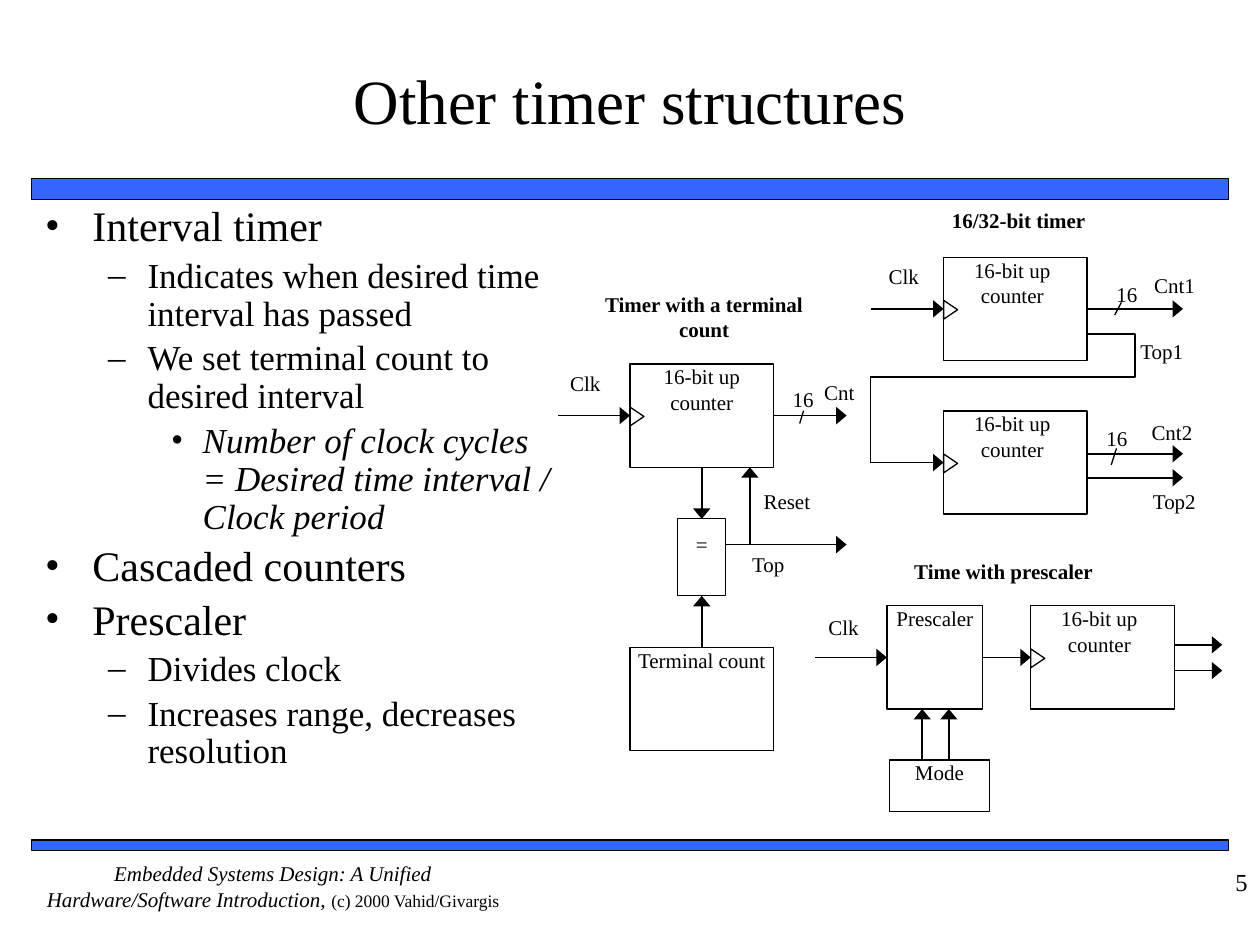
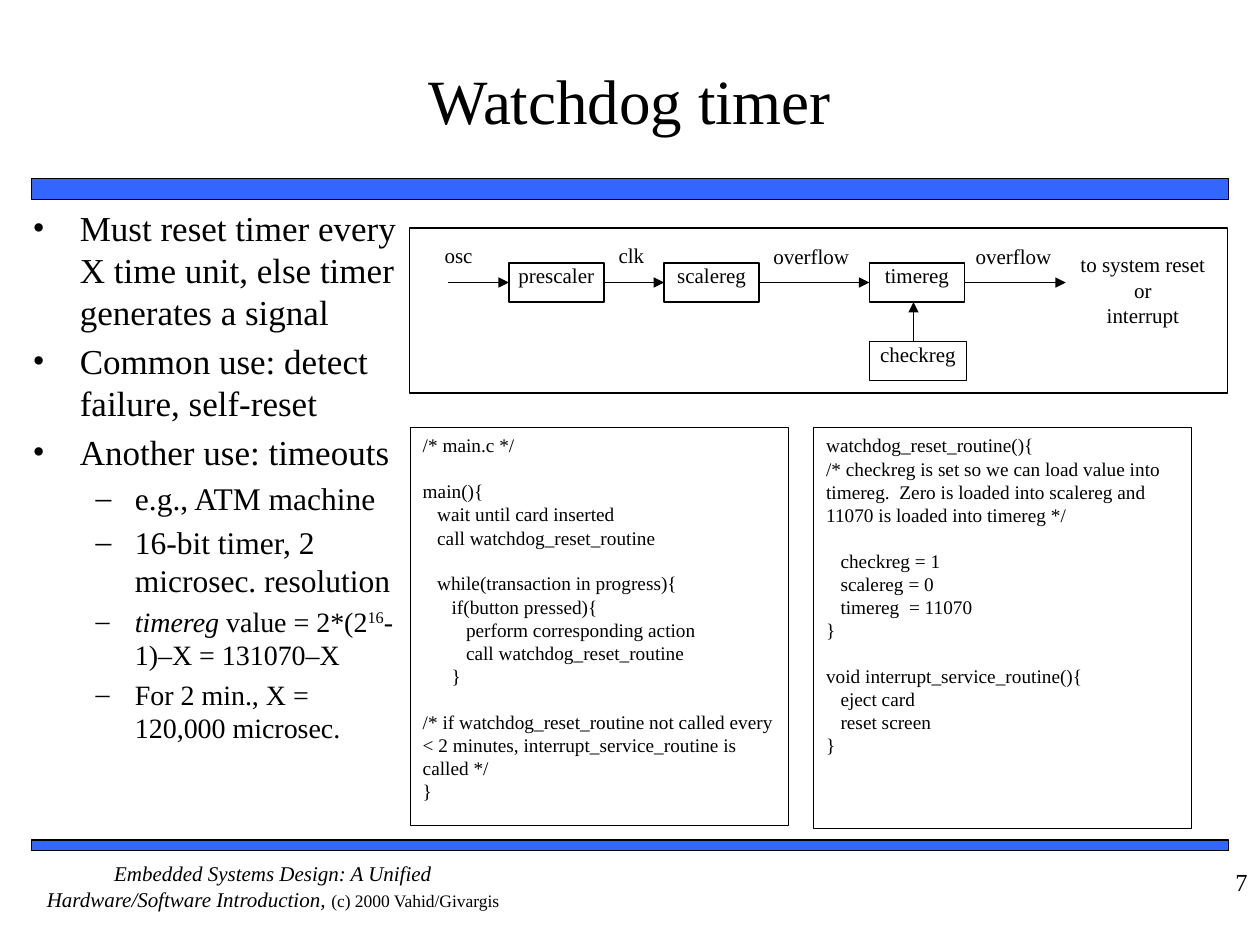
"""Build two slides on timer structures and the watchdog timer."""
from pptx import Presentation
from pptx.dml.color import RGBColor
from pptx.enum.shapes import MSO_CONNECTOR, MSO_SHAPE
from pptx.enum.text import MSO_ANCHOR, PP_ALIGN
from pptx.oxml.ns import qn
from pptx.util import Pt
from lxml.etree import SubElement

BLACK = RGBColor(0x00, 0x00, 0x00)
BAND_BLUE = RGBColor(0x33, 0x66, 0xFF)
FONT = "Times New Roman"
TOP, LEFT, BOTTOM, RIGHT = 0, 1, 2, 3
BULLETS = [("•", 27, -27), ("–", 58.5, -22.5), ("•", 90, -18)]
CODE_INDENT = 8.25
CODE_LINE = 13


def add_box(slide, text, left, top, width, height, outline=0, fill=None, size=12,
            bold=False, align=PP_ALIGN.CENTER, insets=(0, 0, 0, 0)):
    """Add a rectangle when an outline width is given, otherwise a text box."""
    place = Pt(left), Pt(top), Pt(width), Pt(height)
    if outline:
        shape = slide.shapes.add_shape(MSO_SHAPE.RECTANGLE, *place)
        shape.shadow.inherit = False
        shape.line.color.rgb = BLACK
        shape.line.width = Pt(outline)
        if fill is None:
            shape.fill.background()
        else:
            shape.fill.solid()
            shape.fill.fore_color.rgb = fill
    else:
        shape = slide.shapes.add_textbox(*place)
    frame = shape.text_frame
    frame.word_wrap = True
    frame.vertical_anchor = MSO_ANCHOR.TOP
    frame.margin_left, frame.margin_top, frame.margin_right, frame.margin_bottom = map(Pt, insets)
    frame.text = text
    for paragraph in frame.paragraphs:
        paragraph.alignment = align
        for run in paragraph.runs:
            run.font.name = FONT
            run.font.size = Pt(size)
            run.font.bold = bold
            run.font.color.rgb = BLACK
    return shape


def add_line(slide, points, width=1, head="lg", begin=None, end=None):
    """Draw a connector through two points, or an open outline through more."""
    points = [(Pt(x), Pt(y)) for x, y in points]
    if len(points) == 2:
        line = slide.shapes.add_connector(MSO_CONNECTOR.STRAIGHT, *points[0], *points[1])
        if begin:
            line.begin_connect(*begin)
        if end:
            line.end_connect(*end)
    else:
        builder = slide.shapes.build_freeform(*points[0])
        builder.add_line_segments(points[1:], close=False)
        line = builder.convert_to_shape()
        line.fill.background()
    line.line.color.rgb = BLACK
    line.line.width = Pt(width)
    if head:
        SubElement(line.line._get_or_add_ln(), qn("a:tailEnd"), type="triangle", w=head, len="med")
    SubElement(line._element.spPr, qn("a:effectLst"))


presentation = Presentation()
presentation.slide_width = Pt(720)
presentation.slide_height = Pt(540)

timer_points = [
    (0, 24, [("Interval timer", "")]),
    (1, 20, [("Indicates when desired time interval has passed", "")]),
    (1, 20, [("We set terminal count to desired interval", "")]),
    (2, 20, [("Number of clock cycles = Desired time interval / Clock period", "italic")]),
    (0, 24, [("Cascaded counters", "")]),
    (0, 24, [("Prescaler", "")]),
    (1, 20, [("Divides clock", "")]),
    (1, 20, [("Increases range, decreases resolution", "")]),
]
watchdog_points = [
    (0, 20, [("Must reset timer every X time unit, else timer generates a signal", "")]),
    (0, 20, [("Common use: detect failure, self-reset", "")]),
    (0, 20, [("Another use: timeouts", "")]),
    (1, 18, [("e.g., ATM machine", "")]),
    (1, 18, [("16-bit timer, 2 microsec. resolution", "")]),
    (1, 16, [("timereg", "italic"), (" value = 2*(2", ""), ("16", "superscript"),
             ("-1)–X = 131070–X", "")]),
    (1, 16, [("For 2 min., X = 120,000 microsec.", "")]),
]
pages = [
    ("Other timer structures", "5", (18.7, 114, 309, 343.5), 0.9, timer_points),
    ("Watchdog timer", "7", (11.5, 114.5, 226.8, 358.5), 1.0, watchdog_points),
]
slides = []
for title, number, body_place, line_spacing, points in pages:
    slide = presentation.slides.add_slide(presentation.slide_layouts[6])
    slides.append(slide)
    for band_top, band_height in [(102, 12), (480, 6)]:
        add_box(slide, "", 18, band_top, 684, band_height, outline=1, fill=BAND_BLUE)
    footer = add_box(slide, "Embedded Systems Design: A Unified Hardware/Software Introduction, ",
                     18, 492, 276, 36)
    paragraph = footer.text_frame.paragraphs[0]
    paragraph.runs[0].font.italic = True
    credit = paragraph.add_run()
    credit.text = "(c) 2000 Vahid/Givargis"
    credit.font.name = FONT
    credit.font.size = Pt(10)
    credit.font.color.rgb = BLACK
    heading = add_box(slide, title, 30, 12, 660, 90, size=36, insets=(0, 3.6, 0, 3.6))
    heading.text_frame.vertical_anchor = MSO_ANCHOR.MIDDLE
    add_box(slide, number, 648, 492, 72, 36, size=14, align=PP_ALIGN.RIGHT,
            insets=(7.2, 3.6, 7.2, 3.6))

    body = add_box(slide, "", *body_place, insets=(7.2, 3.6, 7.2, 3.6)).text_frame
    for index, (level, size, pieces) in enumerate(points):
        paragraph = body.add_paragraph() if index else body.paragraphs[0]
        paragraph.alignment = PP_ALIGN.LEFT
        paragraph.level = level
        paragraph.line_spacing = line_spacing
        paragraph.space_before = Pt(size * 0.2)
        bullet, margin, indent = BULLETS[level]
        properties = paragraph._p.get_or_add_pPr()
        properties.set("marL", str(Pt(margin)))
        properties.set("indent", str(Pt(indent)))
        SubElement(properties, qn("a:buFont"), typeface=FONT)
        SubElement(properties, qn("a:buChar"), char=bullet)
        for text, style in pieces:
            run = paragraph.add_run()
            run.text = text
            run.font.name = FONT
            run.font.size = Pt(size)
            run.font.color.rgb = BLACK
            run.font.italic = style == "italic"
            if style == "superscript":
                run._r.get_or_add_rPr().set("baseline", "30000")

timers, watchdog = slides

boxes = {}
for name, text, left, top, width, height, insets in [
    ("terminal counter", "16-bit up counter", 360, 208, 82, 59, (0, 0, 0, 0)),
    ("comparator", "=", 387.3, 296.5, 27.4, 44, (0, 7.2, 0, 0)),
    ("terminal count", "Terminal count", 360, 370, 82, 59, (0, 0, 0, 0)),
    ("upper counter", "16-bit up counter", 539.2, 147, 82, 59, (0, 0, 3.6, 0)),
    ("lower counter", "16-bit up counter", 539.2, 234.8, 82, 59, (0, 0, 3.6, 0)),
    ("prescaler", "Prescaler", 506.8, 346.2, 54.8, 59, (0, 0, 0, 0)),
    ("prescaled counter", "16-bit up counter", 589, 346.2, 82, 59, (0, 0, 3.6, 0)),
    ("mode", "Mode", 508.3, 434.2, 57, 29.5, (0, 0, 0, 0)),
]:
    boxes[name] = add_box(timers, text, left, top, width, height, outline=0.75, insets=insets)

for text, left, top, width, height in [
    ("Timer with a terminal count", 339, 166.3, 126.7, 29.5),
    ("16/32-bit timer", 527, 118.8, 110.2, 22.3),
    ("Time with prescaler", 499.7, 319, 147.6, 24.5),
]:
    add_box(timers, text, left, top, width, height, bold=True)

for left, top, width in [(315.4, 211.7, 38.2), (496, 150.5, 41), (460, 351.4, 44)]:
    add_box(timers, "Clk", left, top, width, 20)

for text, left, top in [
    ("16", 452.9, 221), ("Cnt", 470.9, 216.7), ("Reset", 436.3, 279.4), ("Top", 429.8, 315.4),
    ("16", 638, 160.6), ("Cnt1", 659.5, 155.5), ("Top1", 651.6, 193.7),
    ("16", 632.2, 243.4), ("Cnt2", 658, 239.8), ("Top2", 658.8, 279.4),
]:
    add_box(timers, text, left, top, 40, 20, align=PP_ALIGN.LEFT)

for points, begin, end in [
    ([(319, 237.5), (360, 237.5)], None, ("terminal counter", LEFT)),
    ([(442, 237.5), (483.8, 237.5)], ("terminal counter", RIGHT), None),
    ([(401, 267), (401, 296.5)], ("terminal counter", BOTTOM), ("comparator", TOP)),
    ([(401, 370), (401, 340.5)], ("terminal count", TOP), ("comparator", BOTTOM)),
    ([(414.7, 311.2), (483.8, 311.2)], None, None),
    ([(428.5, 311.2), (428.5, 267)], None, None),
    ([(497.5, 176.5), (539.2, 176.5)], None, ("upper counter", LEFT)),
    ([(621.2, 176.5), (676, 176.5)], ("upper counter", RIGHT), None),
    ([(621.2, 190.8), (648.7, 190.8), (648.7, 215.3), (497.5, 215.3), (497.5, 264.3),
      (539.2, 264.3)], None, None),
    ([(621.2, 259.3), (676, 259.3)], None, None),
    ([(621.2, 273), (676, 273)], None, None),
    ([(465.8, 375.7), (506.8, 375.7)], None, ("prescaler", LEFT)),
    ([(561.6, 375.7), (589, 375.7)], ("prescaler", RIGHT), ("prescaled counter", LEFT)),
    ([(671, 368.5), (698.4, 368.5)], None, None),
    ([(671, 383.2), (698.4, 383.2)], None, None),
    ([(527, 434.2), (527, 405.2)], None, None),
    ([(542.2, 434.8), (542.2, 405.2)], None, None),
]:
    add_line(timers, points, begin=begin and (boxes[begin[0]], begin[1]),
             end=end and (boxes[end[0]], end[1]))

for start, finish in [((459.2, 234.7), (457, 242)), ((640.8, 172.8), (637, 180)),
                      ((638, 256.2), (635, 265.7))]:
    add_line(timers, [start, finish], width=0.75, head=None)

for name in ["terminal counter", "upper counter", "lower counter", "prescaled counter"]:
    counter = boxes[name]
    clock_input = timers.shapes.add_shape(
        MSO_SHAPE.ISOSCELES_TRIANGLE, counter.left - Pt(1.4),
        counter.top + counter.height // 2 - Pt(3.5), Pt(10.8), Pt(8))
    clock_input.rotation = 90
    clock_input.shadow.inherit = False
    clock_input.fill.background()
    clock_input.line.color.rgb = BLACK
    clock_input.line.width = Pt(0.75)

add_box(watchdog, "", 234, 130.3, 467.5, 94.4, outline=0.75)
registers = {}
for name, left, top, width in [
    ("prescaler", 290.8, 150.3, 54.3), ("scalereg", 379.5, 150.3, 54.3),
    ("timereg", 496.8, 150.3, 54.3), ("checkreg", 496.8, 195, 55.5),
]:
    registers[name] = add_box(watchdog, name, left, top, width, 22.3, outline=0.75)

for text, left, top, width, height in [
    ("osc", 251.3, 138.5, 21.6, 22), ("clk", 350, 138.5, 21.6, 22),
    ("overflow", 437, 139, 53.3, 22), ("overflow", 551.5, 139, 55.4, 19),
    ("to system reset\nor\ninterrupt", 615.6, 144, 75, 79),
]:
    add_box(watchdog, text, left, top, width, height)

signal_y = 161.45
chain = [registers[name] for name in ("prescaler", "scalereg", "timereg")]
add_line(watchdog, [(256.2, signal_y), (290.8, signal_y)], 0.75, "med", end=(chain[0], LEFT))
for source, target in zip(chain, chain[1:]):
    add_line(watchdog, [(0, signal_y), (0, signal_y)], 0.75, "med",
             begin=(source, RIGHT), end=(target, LEFT))
add_line(watchdog, [(551.1, signal_y), (609, signal_y)], 0.75, "med", begin=(chain[2], RIGHT))
add_line(watchdog, [(522, 195), (522, 172.6)], 0.75, "med")

main_code = [
    (0, 0, "/* main.c */"),
    (0, 1, "main(){"),
    (1, 0, "wait until card inserted"),
    (1, 0, "call watchdog_reset_routine"),
    (1, 1, "while(transaction in progress){"),
    (2, 0, "if(button pressed){"),
    (3, 0, "perform corresponding action"),
    (3, 0, "call watchdog_reset_routine"),
    (2, 0, "}"),
    (0, 1, "/* if watchdog_reset_routine not called every < 2 minutes, "
           "interrupt_service_routine is called */"),
    (0, 0, "}"),
]
routine_code = [
    (0, 0, "watchdog_reset_routine(){"),
    (0, 0, "/* checkreg is set so we can load value into timereg.  Zero is loaded into "
           "scalereg and 11070 is loaded into timereg */"),
    (1, 1, "checkreg = 1"),
    (1, 0, "scalereg = 0"),
    (1, 0, "timereg  = 11070"),
    (0, 0, "}"),
    (0, 1, "void interrupt_service_routine(){"),
    (1, 0, "eject card"),
    (1, 0, "reset screen"),
    (0, 0, "}"),
]
for left, height, code in [(234.5, 227.5, main_code), (465, 229, routine_code)]:
    listing = add_box(watchdog, "\n".join(text for _, _, text in code), left, 244.3, 216, height,
                      outline=0.75, size=11, align=PP_ALIGN.LEFT, insets=(7.2, 3.6, 7.2, 3.6))
    for paragraph, (level, gap, _) in zip(listing.text_frame.paragraphs, code):
        paragraph.space_before = Pt(gap * CODE_LINE)
        paragraph._p.get_or_add_pPr().set("marL", str(Pt(level * CODE_INDENT)))

presentation.save("out.pptx")
